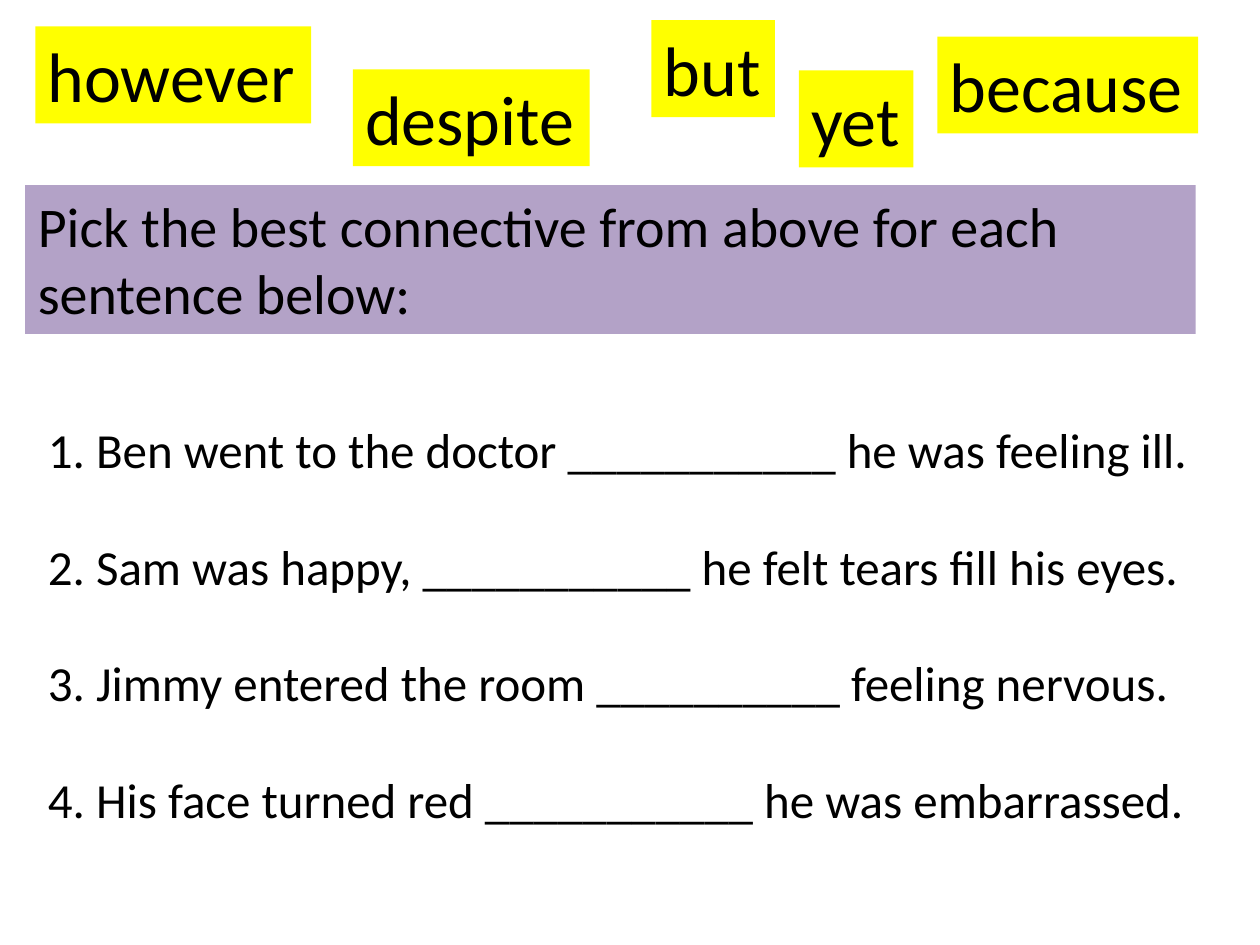
import pptx
import pptx.util
import pptx.dml.color
import pptx.enum.text
import pptx.oxml.ns
from pptx.util import Inches

YELLOW, PURPLE, BLACK = "FFFF00", "B3A2C7", "000000"


def rgb(value):
    return pptx.dml.color.RGBColor.from_string(value)


def write(sp, box, lines, size, fill=None, wrap=True, gap=0):
    """Place a text shape and fill it with left-aligned paragraphs."""
    sp.left, sp.top, sp.width, sp.height = [Inches(v) for v in box]
    if fill:
        sp.fill.solid()
        sp.fill.fore_color.rgb = rgb(fill)
    tf = sp.text_frame
    frame_format = {
        "word_wrap": wrap,
        "auto_size": pptx.enum.text.MSO_AUTO_SIZE.SHAPE_TO_FIT_TEXT,
        "vertical_anchor": pptx.enum.text.MSO_ANCHOR.TOP,
    }
    for name, value in frame_format.items():
        setattr(tf, name, value)
    for i, line in enumerate(lines):
        p = tf.paragraphs[0] if i == 0 else tf.add_paragraph()
        p.alignment = pptx.enum.text.PP_ALIGN.LEFT
        p.space_before = pptx.util.Pt(gap if i else 0)
        r = p.add_run()
        r.text = line
        r.font.name = "Calibri"
        r.font.size = pptx.util.Pt(size)
        r.font.color.rgb = rgb(BLACK)


prs = pptx.Presentation()
prs.slide_width, prs.slide_height = Inches(10), Inches(7.5)
s = prs.slides.add_slide(prs.slide_layouts[1])

# Instruction banner
write(s.shapes.title, (0.2, 1.47, 9.29, 1.18),
      ["Pick the best connective from above for each sentence below:"],
      32, fill=PURPLE)

# Sentences with gaps, numbered in the text and without bullets
sentences = [
    "1. Ben went to the doctor ___________ he was feeling ill.",
    "2. Sam was happy, ___________ he felt tears fill his eyes.",
    "3. Jimmy entered the room __________ feeling nervous.",
    "4. His face turned red ___________ he was embarrassed.",
]
body = s.placeholders[1]
write(body, (0.28, 3.28, 9.72, 3.4), sentences, 28, gap=33)
for p in body.text_frame.paragraphs:
    pPr = p._p.get_or_add_pPr()
    pPr.set("marL", "0")
    pPr.set("indent", "0")
    pPr.append(pptx.oxml.parse_xml(
        "<a:buNone %s/>" % pptx.oxml.ns.nsdecls("a")))

# Connective word cards
cards = [
    ("however", 0.28, 0.21, 2.19),
    ("but", 5.17, 0.16, 0.98),
    ("because", 7.44, 0.29, 2.07),
    ("yet", 6.34, 0.56, 0.91),
    ("despite", 2.8, 0.55, 1.88),
]
for word, left, top, width in cards:
    sp = s.shapes.add_textbox(0, 0, 0, 0)
    write(sp, (left, top, width, 0.77), [word], 40, fill=YELLOW, wrap=False)

prs.save("out.pptx")
